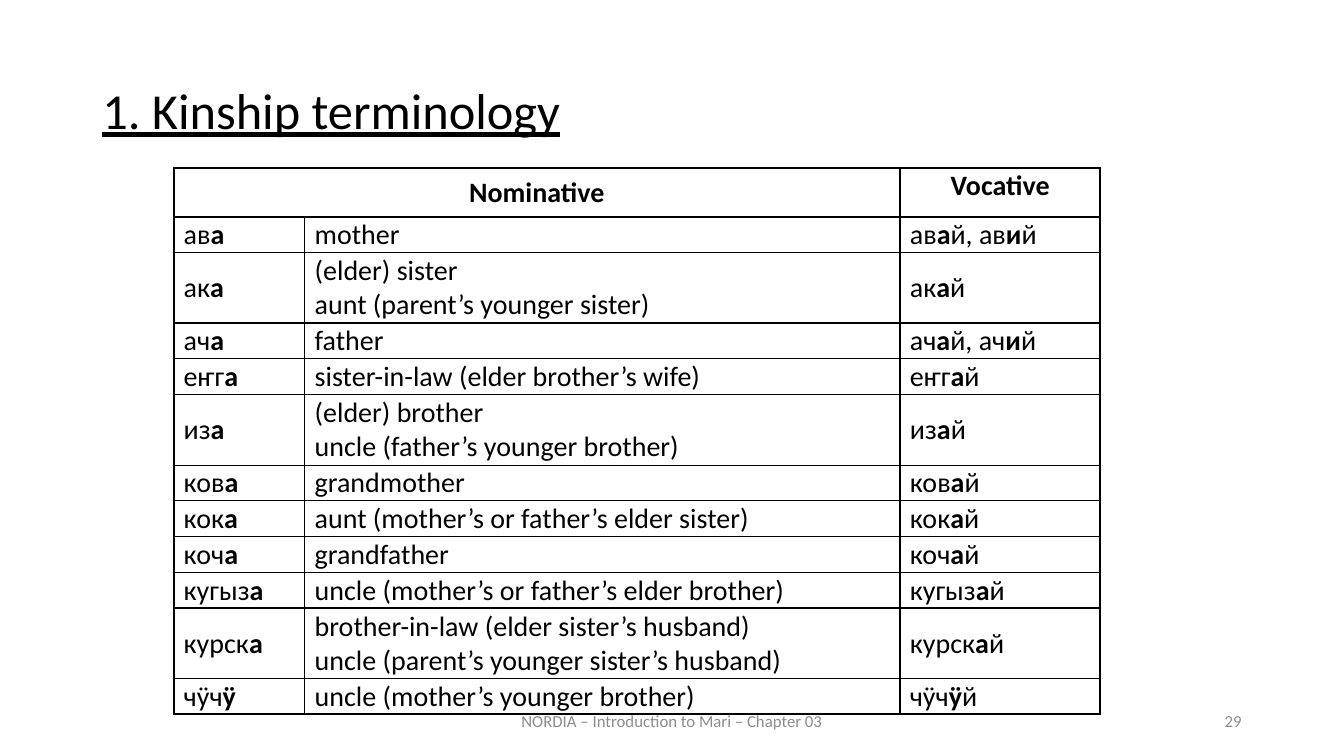
from dataclasses import dataclass

import lxml.etree
import pptx
import pptx.dml.color
import pptx.enum.text
import pptx.oxml.ns
import pptx.util

Cm = pptx.util.Cm
Pt = pptx.util.Pt
ALIGN = pptx.enum.text.PP_ALIGN
ANCHOR = pptx.enum.text.MSO_ANCHOR


@dataclass(frozen=True)
class Theme:
    font: str = "Calibri"
    ink: str = "000000"
    muted: str = "8C8C8C"
    title_size: int = 36
    table_size: int = 20
    footer_size: int = 12
    thick: float = 1.5
    thin: float = 1


THEME = Theme()
COLUMN_WIDTHS = [3.3, 15, 5.05]
HEADER_HEIGHT = 1.22
LINE_HEIGHT = 0.88

# Asterisks enclose the stressed vowel.
KINSHIP = [
    ("ав*а*", "mother", "ав*а*й, ав*и*й"),
    ("ак*а*", "(elder) sister\naunt (parent’s younger sister)", "ак*а*й"),
    ("ач*а*", "father", "ач*а*й, ач*и*й"),
    ("еҥг*а*", "sister-in-law (elder brother’s wife)", "еҥг*а*й"),
    ("из*а*", "(elder) brother\nuncle (father’s younger brother)", "из*а*й"),
    ("ков*а*", "grandmother", "ков*а*й"),
    ("кок*а*", "aunt (mother’s or father’s elder sister)", "кок*а*й"),
    ("коч*а*", "grandfather", "коч*а*й"),
    ("кугыз*а*", "uncle (mother’s or father’s elder brother)", "кугыз*а*й"),
    ("курск*а*", "brother-in-law (elder sister’s husband)\n"
                 "uncle (parent’s younger sister’s husband)", "курск*а*й"),
    ("чӱч*ӱ*", "uncle (mother’s younger brother)", "чӱч*ӱ*й"),
]


def format_run(run, size, color, bold=False):
    run.font.name = THEME.font
    run.font.size = Pt(size)
    run.font.bold = bold
    run.font.color.rgb = pptx.dml.color.RGBColor.from_string(color)


def add_text(slide, text, box, size, color, alignment):
    shape = slide.shapes.add_textbox(*(Cm(length) for length in box))
    frame = shape.text_frame
    frame.word_wrap = True
    frame.vertical_anchor = ANCHOR.MIDDLE
    frame.text = text
    paragraph = frame.paragraphs[0]
    paragraph.alignment = alignment
    format_run(paragraph.runs[0], size, color)
    return paragraph


def set_borders(cell, widths):
    properties = cell._tc.get_or_add_tcPr()
    for side, width in zip("LRTB", widths):
        line = lxml.etree.SubElement(
            properties, pptx.oxml.ns.qn(f"a:ln{side}"), w=str(Pt(width)))
        fill = lxml.etree.SubElement(line, pptx.oxml.ns.qn("a:solidFill"))
        lxml.etree.SubElement(
            fill, pptx.oxml.ns.qn("a:srgbClr"), val=THEME.ink)
    cell.fill.background()


def set_margins(cell, side, top, bottom):
    cell.margin_left = cell.margin_right = Cm(side)
    cell.margin_top = Cm(top)
    cell.margin_bottom = Cm(bottom)


def fill_header(cell, text, margins):
    cell.text = text
    set_margins(cell, *margins)
    paragraph = cell.text_frame.paragraphs[0]
    paragraph.alignment = ALIGN.CENTER
    format_run(paragraph.runs[0], THEME.table_size, THEME.ink, bold=True)


def fill_entry(cell, text):
    set_margins(cell, 0.25, 0.02, 0)
    cell.vertical_anchor = ANCHOR.MIDDLE
    frame = cell.text_frame
    for index, line in enumerate(text.split("\n")):
        paragraph = frame.add_paragraph() if index else frame.paragraphs[0]
        for position, part in enumerate(line.split("*")):
            if part:
                run = paragraph.add_run()
                run.text = part
                format_run(run, THEME.table_size, THEME.ink, position % 2 == 1)


def add_kinship_table(slide, left, top):
    heights = [HEADER_HEIGHT] + [
        LINE_HEIGHT * (meaning.count("\n") + 1) + 0.02
        for _, meaning, _ in KINSHIP]
    table = slide.shapes.add_table(
        len(heights), len(COLUMN_WIDTHS), Cm(left), Cm(top),
        Cm(sum(COLUMN_WIDTHS)), Cm(sum(heights))).table
    table.first_row = table.horz_banding = False
    for column, width in zip(table.columns, COLUMN_WIDTHS):
        column.width = Cm(width)
    for row, height in zip(table.rows, heights):
        row.height = Cm(height)

    vertical = [THEME.thick, THEME.thin, THEME.thick, THEME.thick]
    horizontal = ([THEME.thick] * 2 + [THEME.thin] * (len(KINSHIP) - 1)
                  + [THEME.thick])
    for row in range(len(heights)):
        for column in range(len(COLUMN_WIDTHS)):
            set_borders(table.cell(row, column),
                        vertical[column:column + 2] + horizontal[row:row + 2])

    table.cell(0, 0).merge(table.cell(0, 1))
    fill_header(table.cell(0, 0), "Nominative", (0.33, 0.18, 0.18))
    fill_header(table.cell(0, 2), "Vocative", (0.25, 0.02, 0))
    for row, entry in enumerate(KINSHIP, start=1):
        for column, text in enumerate(entry):
            fill_entry(table.cell(row, column), text)


def add_title(slide, text, box):
    title = add_text(slide, text, box, THEME.title_size, THEME.ink,
                     ALIGN.JUSTIFY)
    title.line_spacing = 0.9
    title.space_before = Pt(18)
    title.runs[0].font.underline = True


def main():
    presentation = pptx.Presentation()
    presentation.slide_width = Cm(33.87)
    presentation.slide_height = Cm(19.05)
    slide = presentation.slides.add_slide(presentation.slide_layouts[6])
    add_title(slide, "1. Kinship terminology", (2.33, 1.01, 29.21, 3.68))
    add_text(slide, "NORDIA – Introduction to Mari – Chapter 03",
             (11.22, 17.66, 11.43, 1.01), THEME.footer_size, THEME.muted,
             ALIGN.CENTER)
    add_text(slide, "29", (23.92, 17.66, 7.62, 1.01), THEME.footer_size,
             THEME.muted, ALIGN.RIGHT)
    add_kinship_table(slide, 4.38, 4.24)
    presentation.save("out.pptx")


if __name__ == "__main__":
    main()
